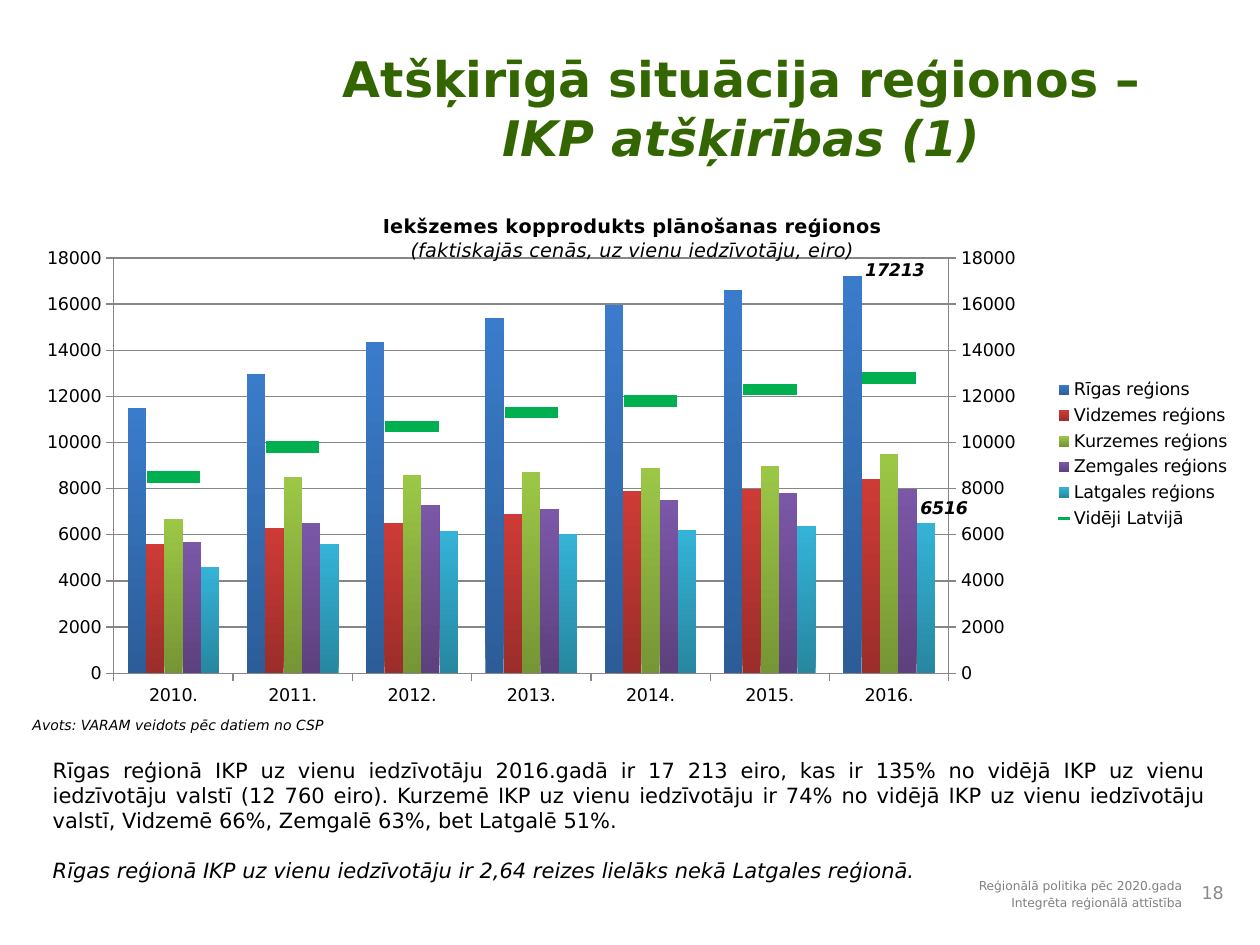
from copy import deepcopy

from lxml import etree
from pptx import Presentation
from pptx import util as u
from pptx.chart.data import CategoryChartData
from pptx.dml.color import RGBColor
from pptx.enum import chart as ch, text
from pptx.oxml import parse_xml
from pptx.oxml.ns import nsdecls, qn

FONT = "DejaVu Sans"
GREEN, BLACK, GRID = "336600", "000000", "868686"
YEARS = ["2010.", "2011.", "2012.", "2013.", "2014.", "2015.", "2016."]
# name, values, gradient from bottom to top
REGIONS = [
    ("Rīgas reģions", (11499, 12979, 14356, 15416, 15972, 16625, 17213), ("2C5D98", "3A7CCB")),
    ("Vidzemes reģions", (5600, 6300, 6500, 6900, 7900, 8000, 8400), ("9B2D2A", "CE3B37")),
    ("Kurzemes reģions", (6700, 8500, 8600, 8700, 8900, 9000, 9500), ("769535", "9CC746")),
    ("Zemgales reģions", (5700, 6500, 7300, 7100, 7500, 7800, 8000), ("5D417E", "7B57A8")),
    ("Latgales reģions", (4607, 5609, 6147, 6024, 6184, 6374, 6516), ("2787A0", "34B3D6")),
]
AVERAGE = ("Vidēji Latvijā", (8500, 9800, 10700, 11300, 11800, 12300, 12800), "00B050")
LABEL_OFFSETS = {0: (0.035, 0.017), 4: (0.015, 0)}  # series: shift of its 2016 label
CHART_TITLE = [("Iekšzemes kopprodukts plānošanas reģionos", {"bold": True}),
               ("(faktiskajās cenās, uz vienu iedzīvotāju, eiro)", {"italic": True})]
TITLE = [("Atšķirīgā situācija reģionos –", {}), ("IKP atšķirības (1)", {"italic": True})]
SOURCE = [("Avots: VARAM veidots pēc datiem no CSP", {"italic": True})]
BODY = [
    ("Rīgas reģionā IKP uz vienu iedzīvotāju 2016.gadā ir 17 213 eiro, kas ir 135% no vidējā IKP "
     "uz vienu iedzīvotāju valstī (12 760 eiro). Kurzemē IKP uz vienu iedzīvotāju ir 74% no vidējā "
     "IKP uz vienu iedzīvotāju valstī, Vidzemē 66%, Zemgalē 63%, bet Latgalē 51%.", {}),
    ("Rīgas reģionā IKP uz vienu iedzīvotāju ir 2,64 reizes lielāks nekā Latgales reģionā.",
     {"italic": True, "before": 14}),
]
FOOTER = [("Reģionālā politika pēc 2020.gada", {}),
          ("Integrēta reģionālā attīstība", {"before": 1.4})]


def rgb(value):
    return RGBColor.from_string(value)


def style(font, size, color=BLACK, bold=False, italic=False):
    font.name, font.size, font.bold, font.italic = FONT, u.Pt(size), bold, italic
    font.color.rgb = rgb(color)


def write(tf, lines, align="LEFT", **fmt):
    for i, (words, extra) in enumerate(lines):
        p = tf.add_paragraph() if i else tf.paragraphs[0]
        p.alignment = getattr(text.PP_ALIGN, align)
        extra = dict(extra)
        before = extra.pop("before", 0)
        if before:
            p.space_before = u.Pt(before)
        r = p.add_run()
        r.text = words
        style(r.font, **{**fmt, **extra})


def add_text(slide, box, lines, anchor="TOP", wrap=True, **fmt):
    tf = slide.shapes.add_textbox(*map(u.Inches, box)).text_frame
    tf.word_wrap = wrap
    tf.vertical_anchor = getattr(text.MSO_ANCHOR, anchor)
    write(tf, lines, **fmt)


def set_layout(el, index, inner=False, **places):
    """Give a chart part a manual place, in fractions of the chart."""
    for old in el.findall(qn("c:layout")):
        el.remove(old)
    layout = parse_xml(f"<c:layout {nsdecls('c')}><c:manualLayout/></c:layout>")
    pairs = [("layoutTarget", "inner")] if inner else []
    if "w" in places:
        pairs += [("xMode", "edge"), ("yMode", "edge")]
    elif places.pop("edge", False):
        pairs += [("xMode", "edge"), ("yMode", "edge")]
    for tag, value in pairs + list(places.items()):
        etree.SubElement(layout[0], qn("c:" + tag)).set("val", str(value))
    el.insert(index, layout)


def move_last_to_line(chart):
    """Draw the last series as a line on a second value axis."""
    area = chart._chartSpace.chart.plotArea
    bar = area.find(qn("c:barChart"))
    ser = bar.findall(qn("c:ser"))[-1]
    for flag in ser.findall(qn("c:invertIfNegative")):
        ser.remove(flag)
    line = parse_xml(
        f"<c:lineChart {nsdecls('c')}><c:grouping val='standard'/><c:varyColors val='0'/>"
        "<c:marker val='1'/><c:axId val='5001'/><c:axId val='5002'/></c:lineChart>")
    line.insert(2, ser)
    bar.addnext(line)
    cat, val = area.find(qn("c:catAx")), area.find(qn("c:valAx"))
    cat2, val2 = deepcopy(cat), deepcopy(val)
    for axis, own, other in ((cat2, "5001", "5002"), (val2, "5002", "5001")):
        axis.find(qn("c:axId")).set("val", own)
        axis.find(qn("c:crossAx")).set("val", other)
    cat2.find(qn("c:delete")).set("val", "1")
    val2.remove(val2.find(qn("c:majorGridlines")))
    val2.find(qn("c:axPos")).set("val", "r")
    val2.find(qn("c:crosses")).set("val", "max")
    val.addnext(val2)
    val2.addnext(cat2)


def add_gdp_chart(slide):
    data = CategoryChartData(number_format="0")
    data.categories = YEARS
    for name, values, _ in REGIONS + [AVERAGE]:
        data.add_series(name, values)
    box = map(u.Inches, (0.16, 1.49, 9.66, 4.23))
    chart = slide.shapes.add_chart(ch.XL_CHART_TYPE.COLUMN_CLUSTERED, *box, data).chart
    style(chart.font, 10)

    # Title, legend and plot area
    write(chart.chart_title.text_frame, CHART_TITLE, align="CENTER", size=11)
    set_layout(chart.chart_title._element, 1, edge=True, x=0.295, y=0.04)
    chart.has_legend = True
    chart.legend.position = ch.XL_LEGEND_POSITION.RIGHT
    chart.legend.include_in_layout = False
    style(chart.legend.font, 10)
    set_layout(chart.legend._element, 1, x=0.845, y=0.35, w=0.155, h=0.3)
    set_layout(chart._chartSpace.chart.plotArea, 0, inner=True,
               x=0.077, y=0.132, w=0.686, h=0.779)

    # Axes
    value_axis = chart.value_axis
    value_axis.minimum_scale, value_axis.maximum_scale, value_axis.major_unit = 0, 18000, 2000
    value_axis.has_major_gridlines = True
    value_axis.tick_labels.number_format = "0"
    value_axis.tick_labels.number_format_is_linked = False
    for axis in (chart.category_axis, value_axis):
        axis.major_tick_mark = ch.XL_TICK_MARK.OUTSIDE
        style(axis.tick_labels.font, 10)
    for part in (chart.category_axis, value_axis, value_axis.major_gridlines):
        part.format.line.color.rgb = rgb(GRID)
        part.format.line.width = u.Pt(0.75)
    move_last_to_line(chart)

    # Columns
    columns, line = chart.plots
    columns.gap_width, columns.overlap, columns.vary_by_categories = 150, 0, False
    for s, (_, _, stops) in zip(columns.series, REGIONS):
        fill = s.format.fill
        fill.gradient()
        fill.gradient_angle = 90
        for stop, color in zip(fill.gradient_stops, stops):
            stop.color.rgb = rgb(color)
    for index, (dx, dy) in LABEL_OFFSETS.items():
        s = columns.series[index]
        s.data_labels.show_value = False
        label = s.points[len(YEARS) - 1].data_label
        style(label.font, 10, bold=True, italic=True)
        label.position = ch.XL_LABEL_POSITION.OUTSIDE_END
        dlbl = s._element.find(qn("c:dLbls")).find(qn("c:dLbl"))
        set_layout(dlbl, 1, x=dx, y=dy)

    # National average as dashes
    s = line.series[0]
    s.smooth = False
    s.format.line.fill.background()
    s.marker.style, s.marker.size = ch.XL_MARKER_STYLE.DASH, 30
    s.marker.format.fill.solid()
    s.marker.format.fill.fore_color.rgb = rgb(AVERAGE[2])
    s.marker.format.line.fill.background()


def main():
    prs = Presentation()
    prs.slide_width, prs.slide_height = u.Inches(10), u.Inches(7.5)
    slide = prs.slides.add_slide(prs.slide_layouts[6])
    add_text(slide, (2.1, 0.49, 7.57, 0.72), TITLE, anchor="MIDDLE", align="CENTER",
             size=28, color=GREEN, bold=True)
    add_text(slide, (0.16, 5.64, 2.57, 0.24), SOURCE, wrap=False, size=8)
    add_text(slide, (0.32, 5.96, 9.35, 1.14), BODY, align="JUSTIFY", size=12)
    add_gdp_chart(slide)
    add_text(slide, (9.33, 6.92, 0.48, 0.33), [("18", {})], anchor="MIDDLE", align="RIGHT",
             size=10, color="898989")
    add_text(slide, (5.48, 6.92, 4, 0.33), FOOTER, align="RIGHT", size=7, color="808080")
    prs.save("out.pptx")


if __name__ == "__main__":
    main()
